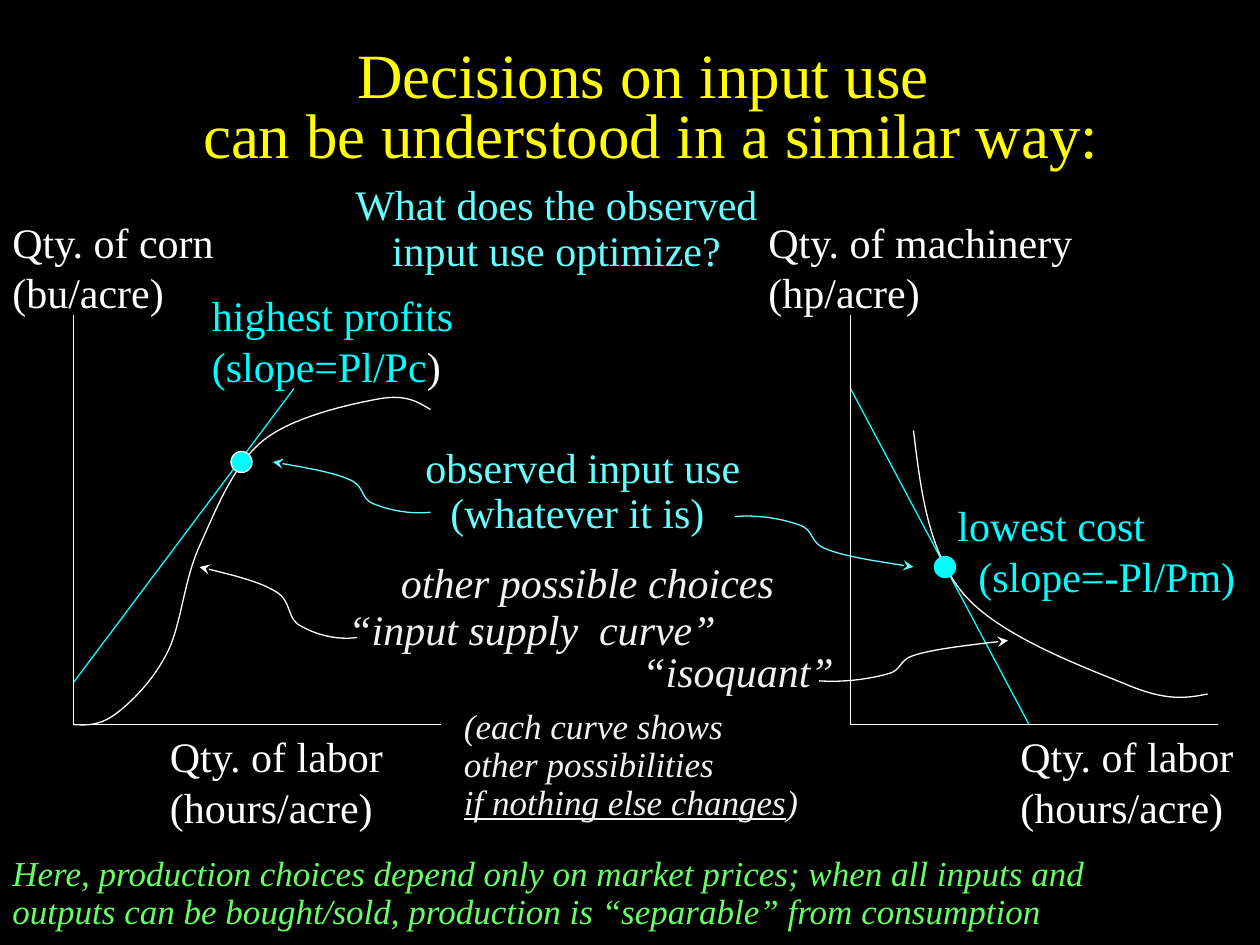
from lxml.etree import SubElement
from pptx import Presentation
from pptx.dml.color import RGBColor
from pptx.enum.shapes import MSO_CONNECTOR as Connector, MSO_SHAPE as Shape
from pptx.enum.text import MSO_ANCHOR as Anchor, MSO_AUTO_SIZE as AutoSize, PP_ALIGN as Align
from pptx.oxml.ns import qn
from pptx.util import Inches, Pt

BLACK = RGBColor(0x00, 0x00, 0x00)
WHITE = RGBColor(0xFF, 0xFF, 0xFF)
PALE = RGBColor(0xF2, 0xF2, 0xF2)
YELLOW = RGBColor(0xFF, 0xFF, 0x00)
CYAN = RGBColor(0x00, 0xFF, 0xFF)
AQUA = RGBColor(0x66, 0xFF, 0xFF)
GREEN = RGBColor(0x66, 0xFF, 0x66)

COLUMNS, ROWS = 120, 90
WAVE = [(0, 0.04), (0.14, 0), (0.27, 0.09), (0.36, 0.2), (0.45, 0.3),
        (0.41, 0.54), (0.52, 0.67), (0.62, 0.8), (0.81, 0.9), (1, 1)]
SUPPLY_CURVE = [(7, 69), (8.3, 69.1), (9.5, 69.1), (11, 68), (12.5, 66.9), (14.7, 64.7), (16, 62),
                (17.3, 59.3), (17.5, 55.3), (19, 52), (20.5, 48.7), (22.2, 44.3), (25, 42),
                (27.8, 39.7), (33.3, 38.5), (36, 38), (38.7, 37.5), (39.8, 38.3), (41, 39)]
ISOQUANT = [(87, 41), (87.7, 46.8), (88.4, 52.6), (91.8, 56.6), (95.2, 60.6), (103.4, 63.6),
            (107.3, 65.2), (111.1, 66.8), (113, 66.5), (115, 66.1)]


class Board:
    font = "Times New Roman"
    line_width = Pt(0.75)

    def __init__(self, deck):
        self.cell_width = deck.slide_width / COLUMNS
        self.cell_height = deck.slide_height / ROWS
        self.page = deck.slides.add_slide(deck.slide_layouts[5])
        fill = self.page.background.fill
        fill.solid()
        fill.fore_color.rgb = BLACK

    def place(self, column, row):
        return round(column * self.cell_width), round(row * self.cell_height)

    def stroke(self, shape, color):
        shape.line.color.rgb = color
        shape.line.width = self.line_width

    def span(self, para, text, color, size, italic=False, underline=False):
        span = para.add_run()
        span.text = text
        font = span.font
        font.name, font.size, font.color.rgb = self.font, Pt(size), color
        font.italic, font.underline = italic, underline

    def title(self, area, lines):
        box = self.page.shapes.title
        box.left, box.top = self.place(*area[:2])
        box.width, box.height = self.place(*area[2:])
        frame = box.text_frame
        frame.auto_size, frame.vertical_anchor = AutoSize.NONE, Anchor.MIDDLE
        para = frame.paragraphs[0]
        para.alignment, para.line_spacing = Align.CENTER, 0.8
        for number, line in enumerate(lines):
            if number:
                para.add_line_break()
            self.span(para, line, YELLOW, 36)

    def text(self, area, lines, color, size=24, italic=False, align=Align.LEFT,
             spacing=1.0, before=0, wrap=True):
        box = self.page.shapes.add_textbox(*self.place(*area[:2]), *self.place(*area[2:]))
        frame = box.text_frame
        frame.word_wrap, frame.auto_size = wrap, AutoSize.SHAPE_TO_FIT_TEXT
        for number, line in enumerate(lines):
            para = frame.add_paragraph() if number else frame.paragraphs[0]
            para.alignment, para.line_spacing, para.space_before = align, spacing, Pt(before)
            for text, changes in ([(line, {})] if isinstance(line, str) else line):
                self.span(para, text, **{"color": color, "size": size, "italic": italic, **changes})
        return frame

    def line(self, start, end, color):
        line = self.page.shapes.add_connector(
            Connector.STRAIGHT, *self.place(*start), *self.place(*end))
        self.stroke(line, color)
        SubElement(line._element.spPr, qn("a:effectLst"))

    def axes(self, column, top, bottom, right):
        self.line((column, top), (column, bottom), WHITE)
        self.line((column, bottom), (right, bottom), WHITE)

    def curve(self, controls, color=WHITE):
        start, *rest = [self.place(*point) for point in controls]
        builder = self.page.shapes.build_freeform(*start)
        builder.add_line_segments(rest, close=False)
        curve = builder.convert_to_shape()
        segments = list(curve._element.iter(qn("a:lnTo")))
        outline = segments[0].getparent()
        for first in range(0, len(segments), 3):
            bezier = SubElement(outline, qn("a:cubicBezTo"))
            for segment in segments[first:first + 3]:
                bezier.append(segment[0])
                outline.remove(segment)
        curve.fill.background()
        curve.shadow.inherit = False
        self.stroke(curve, color)
        return curve

    def wavy_arrow(self, start, end, color=WHITE):
        (left, top), (right, bottom) = start, end
        arrow = self.curve([(left + x * (right - left), top + y * (bottom - top))
                            for x, y in WAVE], color)
        SubElement(arrow.line._get_or_add_ln(), qn("a:tailEnd"), type="stealth")

    def dot(self, column, row, outline):
        dot = self.page.shapes.add_shape(Shape.OVAL, *self.place(column, row), *self.place(2, 2))
        dot.fill.solid()
        dot.fill.fore_color.rgb = CYAN
        dot.shadow.inherit = False
        self.stroke(dot, outline)


def main():
    deck = Presentation()
    deck.slide_width, deck.slide_height = Inches(10), Inches(7.5)
    board = Board(deck)
    board.title((4, 6, 116, 9), ["Decisions on input use ", "can be understood in a similar way:"])

    board.line((28, 37), (7, 65), CYAN)
    board.line((81, 37), (98, 69), CYAN)
    for column in (7, 81):
        board.axes(column, 30, 69, column + 35)
    board.curve(SUPPLY_CURVE)
    board.curve(ISOQUANT)
    board.dot(22, 43, WHITE)
    board.dot(89, 53, CYAN)

    labor = ["Qty. of labor", "(hours/acre)"]
    for area, lines in [((0, 20, 21.8, 10.8), ["Qty. of corn", "(bu/acre)"]),
                        ((72, 20, 31.6, 10.8), ["Qty. of machinery", "(hp/acre)"]),
                        ((15, 69, 24, 10.8), labor),
                        ((96, 69, 24, 10.8), labor)]:
        board.text(area, lines, WHITE, wrap=False)
    board.text((19, 27, 25.7, 10.9),
               ["highest profits", [("(slope=Pl/Pc", {}), (")", {"color": WHITE})]],
               CYAN, wrap=False)
    cost = board.text((90, 47, 29.2, 10.9), ["lowest cost", "(slope=-Pl/Pm)"], CYAN, wrap=False)
    cost.paragraphs[1]._p.get_or_add_pPr().set("marL", str(Pt(12)))

    board.text((39, 42, 33, 10), ["observed input use ", "(whatever it is) "], AQUA,
               align=Align.CENTER, spacing=0.9)
    board.text((32, 17, 42, 10), ["What does the observed input use optimize?"], AQUA,
               align=Align.CENTER, spacing=0.9)
    board.wavy_arrow((70, 49), (87, 54), AQUA)
    board.wavy_arrow((41, 49), (26, 44), AQUA)
    board.wavy_arrow((34, 61), (19, 54))
    board.wavy_arrow((78, 65), (96, 61))

    for area, line, spacing in [((37, 53, 38.5, 5.6), "other possible choices", 0.9),
                                ((32, 58, 39, 4.8), "“input supply  curve”", 0.75),
                                ((60, 62, 22, 4.9), "“isoquant”", 0.75)]:
        board.text(area, [line], PALE, italic=True, spacing=spacing)
    board.text((43, 67, 35, 12.1),
               ["(each curve shows", "other possibilities",
                [("if nothing else changes", {"underline": True}), (")", {})]],
               PALE, size=20, italic=True, spacing=0.9)
    board.text((0, 81, 111, 8.5),
               ["Here, production choices depend only on market prices; when all inputs and "
                "outputs can be bought/sold, production is “separable” from consumption"],
               GREEN, size=20, italic=True, spacing=0.9, before=4)
    deck.save("out.pptx")


if __name__ == "__main__":
    main()
